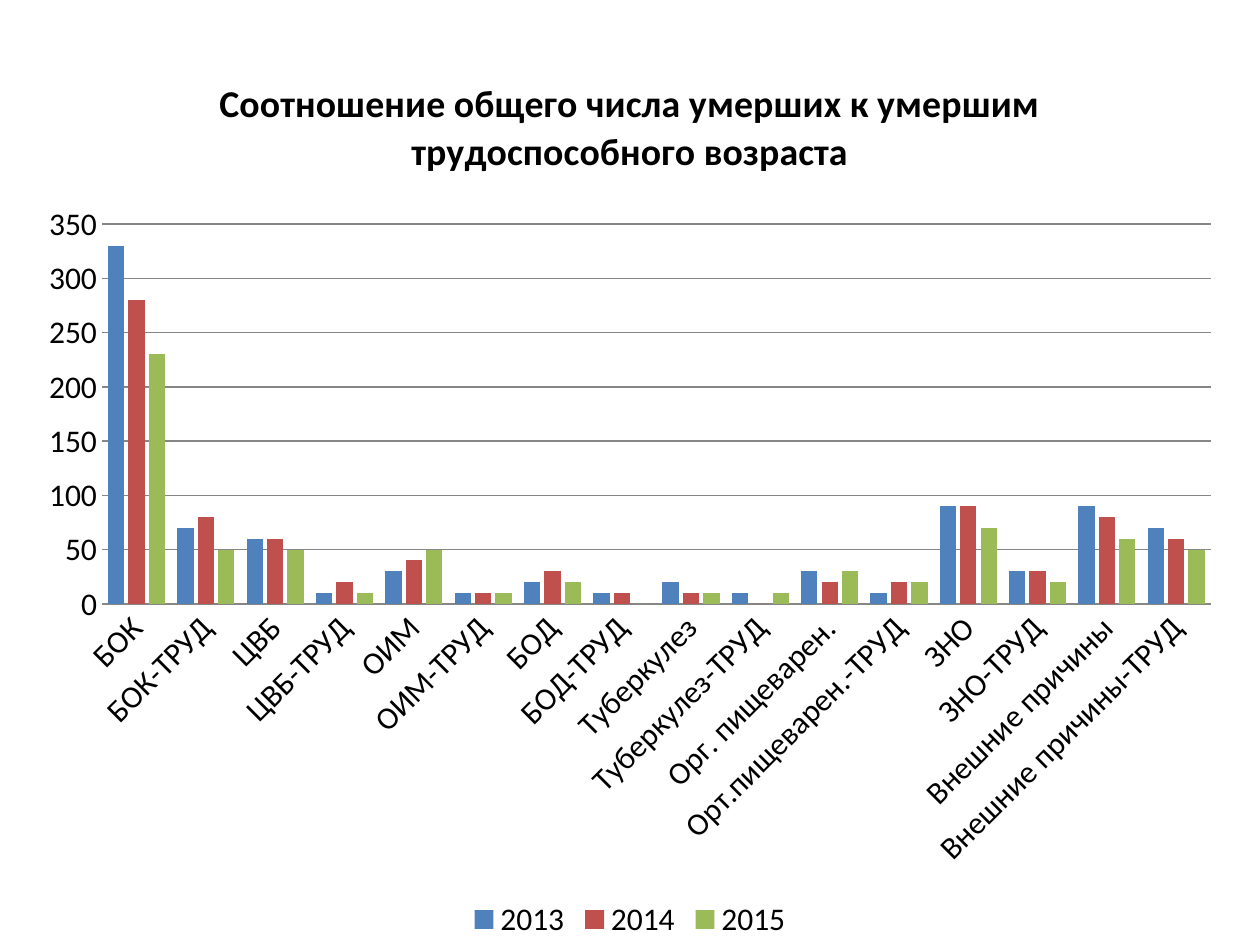
from pptx import Presentation
from pptx import util as u
from pptx.chart.data import CategoryChartData
from pptx.dml.color import RGBColor
from pptx.enum import chart as kinds

TITLE = "Соотношение общего числа умерших к умершим трудоспособного возраста"
CAUSES = [
    "БОК", "БОК-ТРУД", "ЦВБ", "ЦВБ-ТРУД", "ОИМ", "ОИМ-ТРУД",
    "БОД", "БОД-ТРУД", "Туберкулез", "Туберкулез-ТРУД",
    "Орг. пищеварен.", "Орт.пищеварен.-ТРУД", "ЗНО", "ЗНО-ТРУД",
    "Внешние причины", "Внешние причины-ТРУД",
]
DEATHS = {
    "2013": ("4F81BD", [330, 70, 60, 10, 30, 10, 20, 10, 20, 10, 30, 10, 90, 30, 90, 70]),
    "2014": ("C0504D", [280, 80, 60, 20, 40, 10, 30, 10, 10, 0, 20, 20, 90, 30, 80, 60]),
    "2015": ("9BBB59", [230, 50, 50, 10, 50, 10, 20, 0, 10, 10, 30, 20, 70, 20, 60, 50]),
}


def color(value):
    return RGBColor.from_string(value)


class SlideBuilder:
    font_name = "Calibri"
    font_size = 18
    ink = "000000"
    rule = "868686"

    def __init__(self, slide):
        self.slide = slide

    def style_font(self, font):
        font.name = self.font_name
        font.size = u.Pt(self.font_size)
        font.color.rgb = color(self.ink)

    def style_line(self, line):
        line.color.rgb = color(self.rule)
        line.width = u.Pt(0.75)

    def add_title(self, chart, wording):
        chart.has_title = True
        chart.chart_title.include_in_layout = False
        span = chart.chart_title.text_frame.paragraphs[0].add_run()
        span.text = wording

    def style_axes(self, chart):
        for axis in (chart.category_axis, chart.value_axis):
            axis.major_tick_mark = kinds.XL_TICK_MARK.NONE
            axis.minor_tick_mark = kinds.XL_TICK_MARK.NONE
        self.style_line(chart.category_axis.format.line)
        scale = chart.value_axis
        scale.minimum_scale, scale.maximum_scale, scale.major_unit = 0, 350, 50
        scale.format.line.fill.background()
        scale.has_major_gridlines = True
        self.style_line(scale.major_gridlines.format.line)

    def add_columns(self, left, top, width, height, wording, categories, groups):
        data = CategoryChartData(number_format="General")
        data.categories = categories
        for name, (_, values) in groups.items():
            data.add_series(name, values)
        chart = self.slide.shapes.add_chart(
            kinds.XL_CHART_TYPE.COLUMN_CLUSTERED,
            u.Cm(left), u.Cm(top), u.Cm(width), u.Cm(height), data,
        ).chart
        self.style_font(chart.font)
        self.add_title(chart, wording)
        self.style_axes(chart)
        chart.has_legend = True
        chart.legend.position = kinds.XL_LEGEND_POSITION.BOTTOM
        chart.legend.include_in_layout = False
        plot = chart.plots[0]
        plot.gap_width = 75
        plot.overlap = -25
        plot.vary_by_categories = False
        for series, (fill, _) in zip(plot.series, groups.values()):
            series.format.fill.solid()
            series.format.fill.fore_color.rgb = color(fill)


def main():
    deck = Presentation()
    deck.slide_width, deck.slide_height = u.Cm(25.4), u.Cm(19.05)
    page = SlideBuilder(deck.slides.add_slide(deck.slide_layouts[6]))
    page.add_columns(0.5, 0.91, 24.4, 18.14, TITLE, CAUSES, DEATHS)
    deck.save("out.pptx")


if __name__ == "__main__":
    main()
